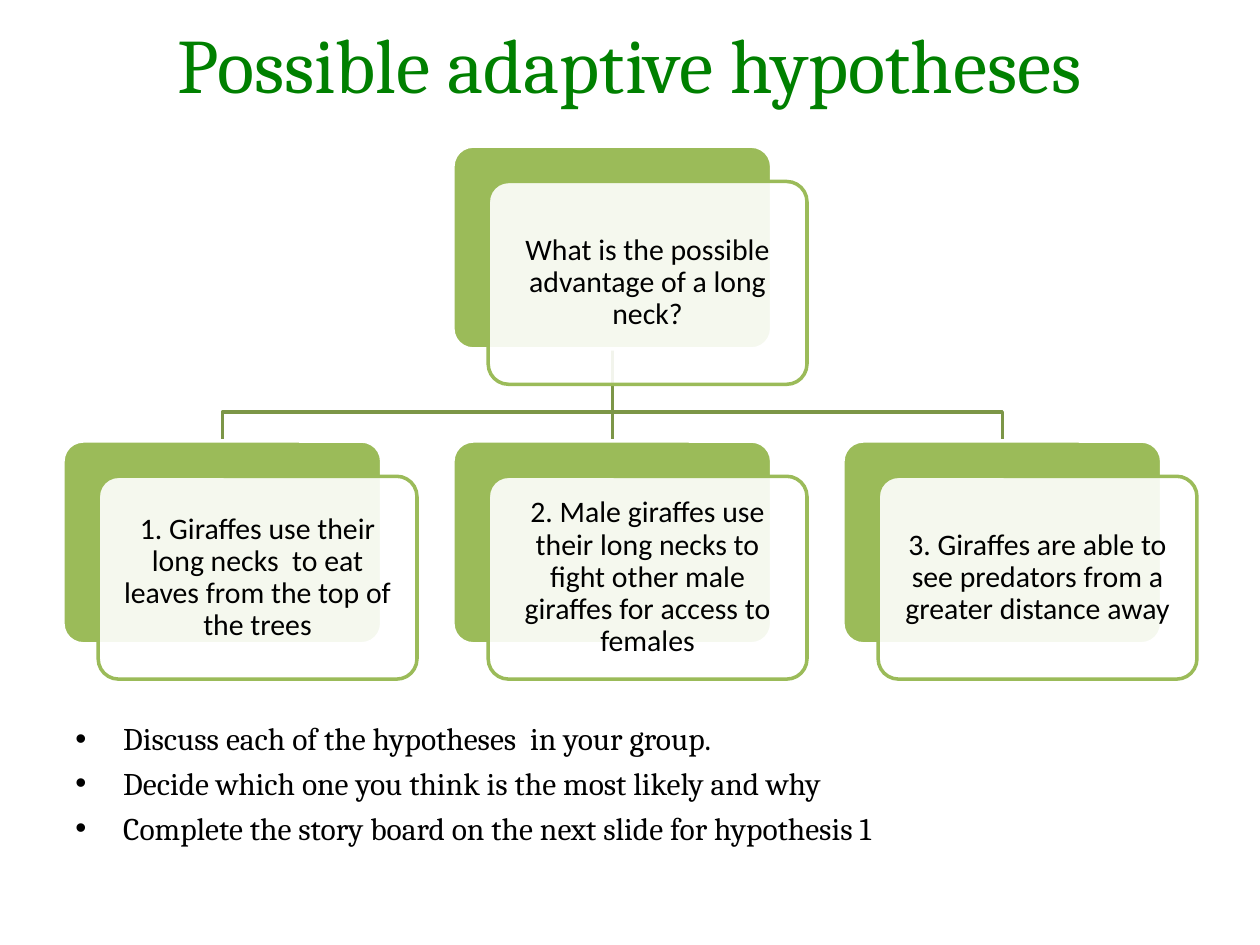
"""Build a slide with a tree of adaptive hypotheses for the giraffe's neck."""
from lxml import etree
from pptx import Presentation
from pptx.dml.color import RGBColor
from pptx.enum.shapes import MSO_CONNECTOR, MSO_SHAPE
from pptx.enum.text import MSO_ANCHOR as Anchor, PP_ALIGN as Align
from pptx.oxml.ns import qn
from pptx.util import Inches, Pt


def color(hex_string):
    return RGBColor.from_string(hex_string)


def add_run(paragraph, text, font_name, size, hex_string):
    run = paragraph.add_run()
    run.text = text
    run.font.name = font_name
    run.font.size = Pt(size)
    run.font.color.rgb = color(hex_string)


GREEN, DARK_GREEN, WHITE, BLACK = "9BBB59", "7C9647", "FFFFFF", "000000"
CARD_WIDTH, CARD_HEIGHT, CARD_OFFSET = 2.53, 1.61, 0.28
LEFTS = [0.5 + 3.095 * column for column in range(3)]
TOP_ROW, BOTTOM_ROW = 1.16, 3.5
TRUNK_TOP, BRANCH_Y = TOP_ROW + CARD_HEIGHT, 3.27
CENTERS = [left + CARD_WIDTH / 2 for left in LEFTS]
CARDS = [
    (LEFTS[1], TOP_ROW, "What is the possible advantage of a long neck?"),
    (LEFTS[0], BOTTOM_ROW, "1. Giraffes use their long necks  to eat leaves from the top of the trees"),
    (LEFTS[1], BOTTOM_ROW, "2. Male giraffes use their long necks to fight other male giraffes for access to females"),
    (LEFTS[2], BOTTOM_ROW, "3. Giraffes are able to see predators from a greater distance away"),
]
TASKS = [
    "Discuss each of the hypotheses  in your group.",
    "Decide which one you think is the most likely and why",
    "Complete the story board on the next slide for hypothesis 1",
]

presentation = Presentation()
presentation.slide_width, presentation.slide_height = Inches(10), Inches(7.5)
slide = presentation.slides.add_slide(presentation.slide_layouts[6])

title = slide.shapes.add_textbox(Inches(0.5), Inches(-0.13), Inches(9), Inches(1.25))
title.text_frame.word_wrap = True
title.text_frame.vertical_anchor = Anchor.MIDDLE
paragraph = title.text_frame.paragraphs[0]
paragraph.alignment = Align.CENTER
add_run(paragraph, "Possible adaptive hypotheses", "Cambria", 44, "008000")

for center in (CENTERS[2], CENTERS[0]):
    builder = slide.shapes.build_freeform(Inches(CENTERS[1]), Inches(TRUNK_TOP))
    corners = [(CENTERS[1], BRANCH_Y), (center, BRANCH_Y), (center, BOTTOM_ROW)]
    builder.add_line_segments([(Inches(x), Inches(y)) for x, y in corners], close=False)
    branch = builder.convert_to_shape()
    branch.shadow.inherit = False
    branch.fill.background()
    branch.line.color.rgb = color(DARK_GREEN)
    branch.line.width = Pt(2)

trunk = slide.shapes.add_connector(
    MSO_CONNECTOR.STRAIGHT,
    Inches(CENTERS[1]), Inches(TRUNK_TOP), Inches(CENTERS[1]), Inches(BOTTOM_ROW),
)
trunk.line.color.rgb = color(DARK_GREEN)
trunk.line.width = Pt(2)
etree.SubElement(trunk.element.spPr, qn("a:effectLst"))

backs = []
for left, top, text in CARDS:
    for offset, fill, line in ((0, GREEN, WHITE), (CARD_OFFSET, WHITE, GREEN)):
        card = slide.shapes.add_shape(
            MSO_SHAPE.ROUNDED_RECTANGLE,
            Inches(left + offset), Inches(top + offset), Inches(CARD_WIDTH), Inches(CARD_HEIGHT),
        )
        card.adjustments[0] = 0.1
        card.shadow.inherit = False
        card.fill.solid()
        card.fill.fore_color.rgb = color(fill)
        card.line.color.rgb = color(line)
        card.line.width = Pt(2)
        if offset == 0:
            backs.append(card)
    white = card.element.spPr.find(qn("a:solidFill")).find(qn("a:srgbClr"))
    etree.SubElement(white, qn("a:alpha"), val="90000")
    frame = card.text_frame
    frame.word_wrap = True
    frame.vertical_anchor = Anchor.MIDDLE
    frame.margin_left = frame.margin_right = Inches(0.1)
    frame.margin_top = frame.margin_bottom = Inches(0.1)
    paragraph = frame.paragraphs[0]
    paragraph.alignment = Align.CENTER
    paragraph.line_spacing = 0.9
    add_run(paragraph, text, "Calibri", 17, BLACK)

trunk.begin_connect(backs[0], 2)
trunk.end_connect(backs[2], 0)

tasks = slide.shapes.add_textbox(Inches(0.5), Inches(5.66), Inches(9), Inches(1.73))
tasks.text_frame.word_wrap = True
for index, text in enumerate(TASKS):
    paragraph = tasks.text_frame.paragraphs[0] if index == 0 else tasks.text_frame.add_paragraph()
    if index:
        paragraph.space_before = Pt(4)
    properties = paragraph._p.get_or_add_pPr()
    properties.set("marL", str(Inches(0.38)))
    properties.set("indent", str(Inches(-0.38)))
    etree.SubElement(properties, qn("a:buFont"), typeface="Arial")
    etree.SubElement(properties, qn("a:buChar"), char="•")
    add_run(paragraph, text, "Cambria", 18, BLACK)

presentation.save("out.pptx")
